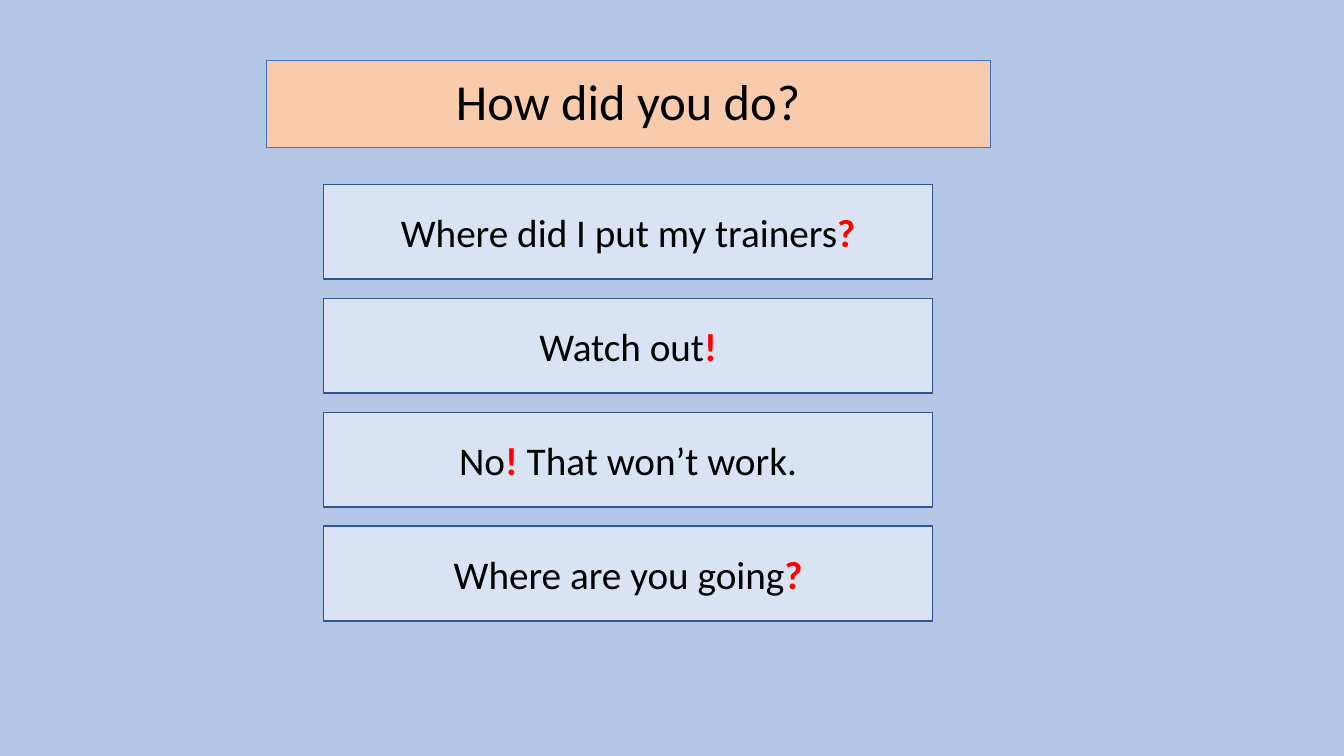
"""Build the quiz answer slide on sentence end marks."""
from dataclasses import dataclass
from itertools import groupby

from pptx import Presentation
from pptx.dml.color import RGBColor as Rgb
from pptx.enum.text import MSO_ANCHOR as Anchor, MSO_AUTO_SIZE as Fit, PP_ALIGN as Align
from pptx.util import Inches, Pt


@dataclass(frozen=True)
class Theme:
    font: str = "Calibri"
    back: str = "B4C7E7"
    ink: str = "000000"
    mark: str = "FF0000"
    head_fill: str = "F8CBAD"
    head_line: str = "4472C4"
    card_fill: str = "DAE3F3"
    card_line: str = "325491"
    head_size: float = 36
    card_size: float = 28


@dataclass(frozen=True)
class Box:
    left: float
    top: float
    width: float
    height: float

    def place(self) -> tuple:
        return tuple(map(Inches, (self.left, self.top, self.width, self.height)))


THEME = Theme()
MARKS = "?!"
HEAD = Box(2.64, 0.6, 7.18, 0.86)
CARDS = (
    "Where did I put my trainers?",
    "Watch out!",
    "No! That won’t work.",
    "Where are you going?",
)
FIRST, STEP = 1.83, 1.13


def write(shape, text: str, *, size: float, space: float = 1.0, marks: str = "") -> None:
    frame = shape.text_frame
    frame.word_wrap = True
    frame.auto_size = Fit.NONE
    frame.vertical_anchor = Anchor.MIDDLE
    para = frame.paragraphs[0]
    para.alignment = Align.CENTER
    para.line_spacing = space
    for key, part in groupby(text, lambda char: char in marks):
        run = para.add_run()
        run.text = "".join(part)
        font = run.font
        font.name, font.size, font.bold = THEME.font, Pt(size), key
        font.color.rgb = Rgb.from_string(THEME.mark if key else THEME.ink)


def paint(shape, fill: str, line: str, width: float) -> None:
    shape.fill.solid()
    shape.fill.fore_color.rgb = Rgb.from_string(fill)
    shape.line.color.rgb = Rgb.from_string(line)
    shape.line.width = Pt(width)


def add_head(slide, text: str) -> None:
    head = slide.shapes.title
    head.left, head.top, head.width, head.height = HEAD.place()
    paint(head, THEME.head_fill, THEME.head_line, 0.75)
    write(head, text, size=THEME.head_size, space=0.9)


def add_card(slide, text: str, top: float) -> None:
    card = slide.shapes.add_shape(1, *Box(3.21, top, 6.04, 0.94).place())
    card.shadow.inherit = False
    paint(card, THEME.card_fill, THEME.card_line, 1)
    write(card, text, size=THEME.card_size, marks=MARKS)


def main() -> None:
    deck = Presentation()
    deck.slide_width, deck.slide_height = Inches(13.33), Inches(7.5)
    slide = deck.slides.add_slide(deck.slide_layouts.get_by_name("Title Only"))
    slide.background.fill.solid()
    slide.background.fill.fore_color.rgb = Rgb.from_string(THEME.back)
    add_head(slide, "How did you do?")
    for row, text in enumerate(CARDS):
        add_card(slide, text, FIRST + row * STEP)
    deck.save("out.pptx")


if __name__ == "__main__":
    main()
